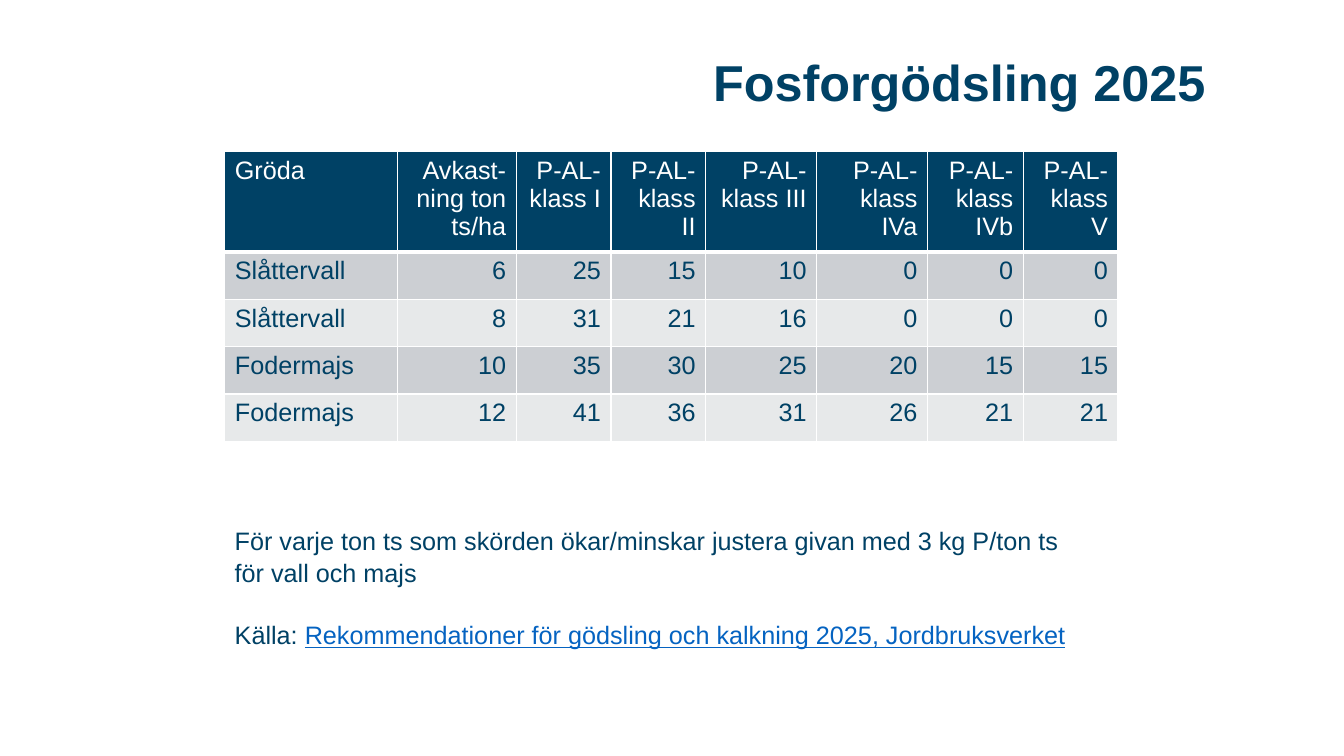
from lxml import etree
from pptx import Presentation
from pptx.dml.color import RGBColor
from pptx.enum.text import MSO_ANCHOR, PP_ALIGN
from pptx.oxml.ns import qn
from pptx.util import Inches, Pt

# Content
TITLE = "Fosforgödsling 2025"
HEADER = ["Gröda", "Avkast-ning ton ts/ha"] + [
    f"P-AL-klass {level}" for level in ("I", "II", "III", "IVa", "IVb", "V")]
CROPS = [
    ("Slåttervall", 6, 25, 15, 10, 0, 0, 0),
    ("Slåttervall", 8, 31, 21, 16, 0, 0, 0),
    ("Fodermajs", 10, 35, 30, 25, 20, 15, 15),
    ("Fodermajs", 12, 41, 36, 31, 26, 21, 21),
]
ADVICE = ("För varje ton ts som skörden ökar/minskar justera givan "
          "med 3 kg P/ton ts för vall och majs")
SOURCE_LABEL = "Källa: "
SOURCE = "Rekommendationer för gödsling och kalkning 2025, Jordbruksverket"

# Style
FONT = "Arial"
NAVY, WHITE, LINK = "004165", "FFFFFF", "0563C1"
BANDS = ("CCCFD3", "E7E9EA")
COLUMN_WIDTHS = (1.71, 1.18, 0.94, 0.94, 1.1, 1.1, 0.95, 0.94)
ROW_HEIGHT = 0.47


def color(value):
    return RGBColor.from_string(value)


def style(span, size=18, ink=NAVY, bold=False, underline=False):
    font = span.font
    font.name, font.size, font.bold, font.underline = FONT, Pt(size), bold, underline
    font.color.rgb = color(ink)


def add_box(left, top, width, height):
    box = page.shapes.add_textbox(*map(Inches, (left, top, width, height)))
    frame = box.text_frame
    frame.word_wrap = True
    frame.vertical_anchor = MSO_ANCHOR.MIDDLE
    return frame


def set_borders(cell, bottom_width):
    properties = cell._tc.get_or_add_tcPr()
    for index, side in enumerate(("lnL", "lnR", "lnT", "lnB")):
        width = bottom_width if side == "lnB" else 1
        line = etree.Element(qn(f"a:{side}"), w=str(Pt(width)))
        fill = etree.SubElement(line, qn("a:solidFill"))
        etree.SubElement(fill, qn("a:srgbClr"), val=WHITE)
        properties.insert(index, line)


deck = Presentation()
deck.slide_width, deck.slide_height = Inches(13.33), Inches(7.5)
page = deck.slides.add_slide(deck.slide_layouts[6])

# Title
para = add_box(1.66, 0.33, 10.4, 1.04).paragraphs[0]
para.text = TITLE
para.alignment = PP_ALIGN.RIGHT
para.line_spacing = 0.9
style(para.runs[0], size=36, bold=True)

# Fertiliser table; the header row grows to fit its text
rows = [HEADER, *CROPS]
table = page.shapes.add_table(
    len(rows), len(HEADER), Inches(2.23), Inches(1.5),
    Inches(sum(COLUMN_WIDTHS)), Inches(ROW_HEIGHT * len(rows))).table
for column, width in zip(table.columns, COLUMN_WIDTHS):
    column.width = Inches(width)
for r, values in enumerate(rows):
    is_header = r == 0
    for c, value in enumerate(values):
        cell = table.cell(r, c)
        cell.text = str(value)
        cell.fill.solid()
        cell.fill.fore_color.rgb = color(NAVY if is_header else BANDS[(r - 1) % 2])
        set_borders(cell, bottom_width=3 if is_header else 1)
        para = cell.text_frame.paragraphs[0]
        para.alignment = PP_ALIGN.RIGHT if c else PP_ALIGN.LEFT
        style(para.runs[0], ink=WHITE if is_header else NAVY)

# Advice and source
frame = add_box(2.23, 5.23, 8.6, 1.18)
frame.text = ADVICE
style(frame.paragraphs[0].runs[0])
para = frame.add_paragraph()
para.space_before = Pt(22)
for text, ink, underline in ((SOURCE_LABEL, NAVY, False), (SOURCE, LINK, True)):
    span = para.add_run()
    span.text = text
    style(span, ink=ink, underline=underline)
for para in frame.paragraphs:
    para.line_spacing = 1.05

deck.save("out.pptx")
